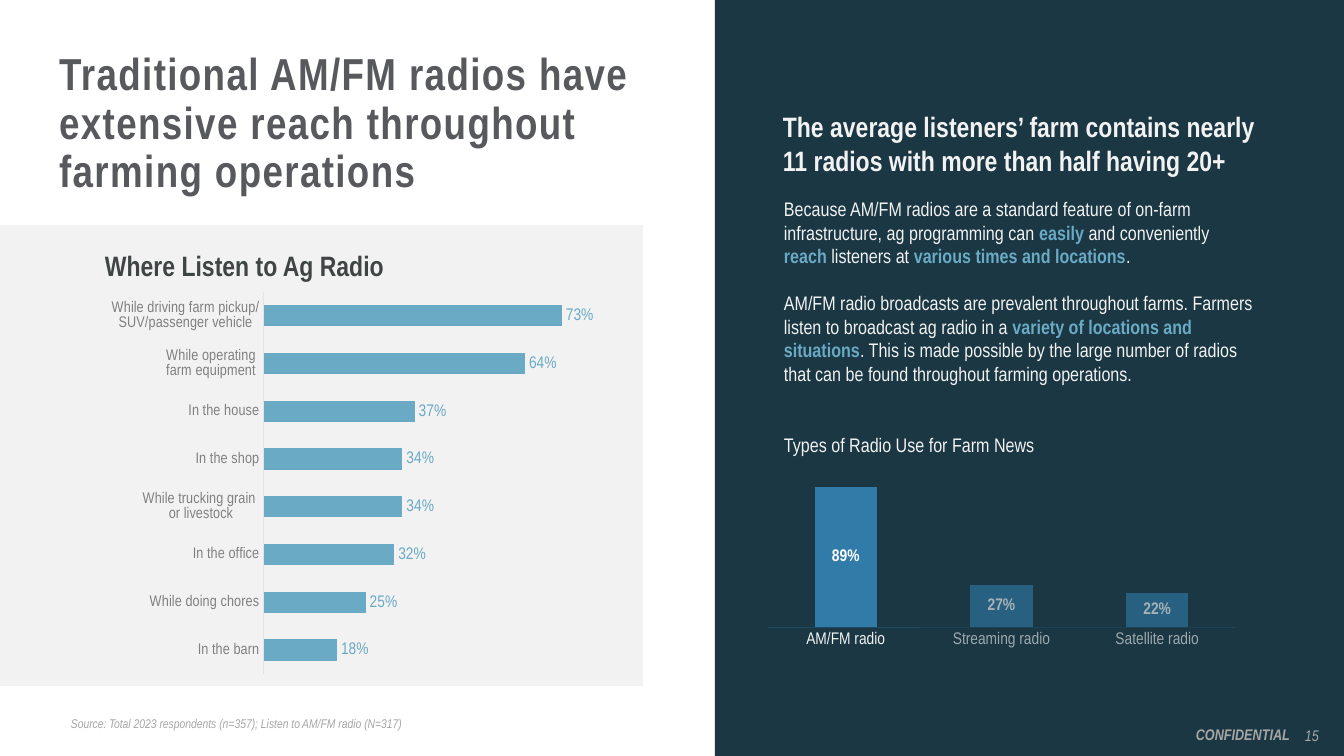
from lxml import etree
from pptx import Presentation, util as u
from pptx.chart.data import CategoryChartData
from pptx.dml.color import RGBColor
from pptx.enum import chart as ch, shapes, text
from pptx.oxml import parse_xml
from pptx.oxml.ns import nsdecls, qn

FONT = "Arial Narrow"
EMU_PER_PX = 914400 / 100.8
NAVY = RGBColor(0x1A, 0x37, 0x43)
AXIS_NAVY = RGBColor(0x1D, 0x4A, 0x65)
BLUE = RGBColor(0x31, 0x7B, 0xA9)
SKY = RGBColor(0x6A, 0xAA, 0xC4)
SILVER = RGBColor(0xBF, 0xBF, 0xBF)
AXIS_GREY = RGBColor(0xE1, 0xE4, 0xE4)
MUTED = RGBColor(0xA6, 0xA6, 0xA6)
GREY = RGBColor(0x80, 0x80, 0x80)
TITLE_GREY = RGBColor(0x57, 0x59, 0x5C)
CHARCOAL = RGBColor(0x3F, 0x44, 0x44)
PALE = RGBColor(0xF2, 0xF2, 0xF2)
WHITE = RGBColor(0xFF, 0xFF, 0xFF)

LISTENING_PLACES = {
    "While driving farm pickup/\nSUV/passenger vehicle": 0.73,
    "While operating \nfarm equipment ": 0.64,
    "In the house": 0.37,
    "In the shop": 0.34,
    "While trucking grain \nor livestock": 0.34,
    "In the office": 0.32,
    "While doing chores": 0.25,
    "In the barn": 0.18,
}
RADIO_TYPES = {"AM/FM radio": 0.89, "Streaming radio": 0.27, "Satellite radio": 0.22}

# Each paragraph: space before in points, then (wording, is highlighted) pieces.
STORY = [
    (0, [("Because AM/FM radios are a standard feature of on-farm infrastructure, "
          "ag programming can ", False),
         ("easily ", True), ("and conveniently ", False), ("reach ", True),
         ("listeners at ", False), ("various times and locations", True), (".", False)]),
    (17, [("AM/FM radio broadcasts are prevalent throughout farms. Farmers listen to "
           "broadcast ag radio in a ", False),
          ("variety of locations and situations", True),
          (". This is made possible by the large number of radios that can be found "
           "throughout farming operations.", False)]),
    (34, [("Types of Radio Use for Farm News", False)]),
]


def px(*lengths):
    return [u.Emu(round(length * EMU_PER_PX)) for length in lengths]


def style_font(font, size, color, bold=False, italic=False):
    font.name, font.size = FONT, u.Pt(size)
    font.bold, font.italic = bold, italic
    font.color.rgb = color


def add_panel(slide, box, color, opacity=100):
    panel = slide.shapes.add_shape(shapes.MSO_SHAPE.RECTANGLE, *px(*box))
    panel.shadow.inherit = False
    panel.fill.solid()
    panel.fill.fore_color.rgb = color
    panel.line.fill.background()
    if opacity < 100:
        tint = panel.fill._xPr.find(qn("a:solidFill"))[0]
        etree.SubElement(tint, qn("a:alpha")).set("val", str(opacity * 1000))


def add_label(slide, box, wording, size, color, bold=False, italic=False,
              align=text.PP_ALIGN.LEFT, anchor=text.MSO_ANCHOR.TOP):
    frame = slide.shapes.add_textbox(*px(*box)).text_frame
    frame.word_wrap = True
    frame.vertical_anchor = anchor
    line = frame.paragraphs[0]
    line.text = wording
    line.alignment = align
    style_font(line.font, size, color, bold, italic)


def set_title(slide, box, wording):
    title = slide.shapes.title
    title.left, title.top, title.width, title.height = px(*box)
    frame = title.text_frame
    frame.auto_size = text.MSO_AUTO_SIZE.NONE
    frame.vertical_anchor = text.MSO_ANCHOR.TOP
    line = frame.paragraphs[0]
    line.text = wording
    line.alignment = text.PP_ALIGN.LEFT
    line.line_spacing = 0.9
    style_font(line.font, 32, TITLE_GREY, bold=True)
    line.runs[0].font._element.set("spc", "100")


def add_story(slide, box):
    frame = slide.shapes.add_textbox(*px(*box)).text_frame
    frame.word_wrap = True
    for number, (gap, pieces) in enumerate(STORY):
        line = frame.add_paragraph() if number else frame.paragraphs[0]
        if gap:
            line.space_before = u.Pt(gap)
        style_font(line.font, 14, PALE)
        for wording, highlighted in pieces:
            run = line.add_run()
            run.text = wording
            if highlighted:
                run.font.bold = True
                run.font.color.rgb = SKY


def add_share_chart(slide, box, kind, shares, maximum, gap, bar_color, axis_color):
    """Add a one-series percentage chart with a hidden value axis."""
    data = CategoryChartData(number_format="0%")
    data.categories = shares.keys()
    data.add_series("Series 1", shares.values())
    chart = slide.shapes.add_chart(kind, *px(*box), data).chart
    chart.has_legend = chart.has_title = False
    style_font(chart.font, 12, CHARCOAL)

    values = chart.value_axis
    values.visible = values.has_major_gridlines = False
    values.minimum_scale, values.maximum_scale = 0, maximum
    categories = chart.category_axis
    categories.major_tick_mark = ch.XL_TICK_MARK.NONE
    categories.format.line.color.rgb = axis_color
    categories.format.line.width = u.Pt(0.75)

    plot = chart.plots[0]
    plot.gap_width = gap
    plot.vary_by_categories = False
    fill = plot.series[0].format.fill
    fill.solid()
    fill.fore_color.rgb = bar_color
    labels = plot.series[0].data_labels
    labels.show_value = True
    labels.number_format, labels.number_format_is_linked = "0%", False
    return chart, labels


def place_plot(chart, **shares):
    """Fix the inner plot area as shares of the chart's size."""
    sizes = "".join(f'<c:{name} val="{share}"/>' for name, share in shares.items())
    layout = parse_xml(
        f'<c:layout {nsdecls("c")}><c:manualLayout><c:layoutTarget val="inner"/>'
        f'<c:xMode val="edge"/><c:yMode val="edge"/>{sizes}</c:manualLayout></c:layout>')
    area = chart._chartSpace.chart.plotArea
    for old in area.findall(qn("c:layout")):
        area.remove(old)
    area.insert(0, layout)


def add_places_chart(slide):
    chart, labels = add_share_chart(
        slide, (100, 284, 584, 398), ch.XL_CHART_TYPE.BAR_CLUSTERED,
        LISTENING_PLACES, 1, 125, SKY, AXIS_GREY)
    chart.category_axis.reverse_order = True
    style_font(chart.category_axis.tick_labels.font, 11, GREY)
    labels.position = ch.XL_LABEL_POSITION.OUTSIDE_END
    style_font(labels.font, 12, SKY)


def add_types_chart(slide):
    chart, labels = add_share_chart(
        slide, (753, 404, 497, 263), ch.XL_CHART_TYPE.COLUMN_CLUSTERED,
        RADIO_TYPES, 1.2, 150, BLUE, AXIS_NAVY)
    place_plot(chart, x=0.03, y=0.13, w=0.94, h=0.72)
    style_font(chart.category_axis.tick_labels.font, 12, PALE)
    labels.position = ch.XL_LABEL_POSITION.CENTER
    style_font(labels.font, 12, WHITE, bold=True)


def main():
    deck = Presentation()
    deck.slide_width, deck.slide_height = px(1344, 756)
    slide = deck.slides.add_slide(deck.slide_layouts.get_by_name("Title Only"))

    add_panel(slide, (0, 225, 643, 461), SILVER, opacity=20)
    add_panel(slide, (715, 0, 629, 756), NAVY)
    add_label(slide, (1152, 720, 148, 29), "CONFIDENTIAL", 11, MUTED, bold=True,
              italic=True, align=text.PP_ALIGN.RIGHT)
    add_label(slide, (1292, 715, 40, 40), "15", 11, MUTED, italic=True,
              align=text.PP_ALIGN.CENTER, anchor=text.MSO_ANCHOR.MIDDLE)

    add_places_chart(slide)
    add_types_chart(slide)
    add_panel(slide, (920, 479, 328, 193), NAVY, opacity=39)

    add_story(slide, (774, 192, 492, 295))
    add_label(slide, (61, 711, 638, 25),
              "Source: Total 2023 respondents (n=357); Listen to AM/FM radio (N=317)",
              9, MUTED, italic=True, anchor=text.MSO_ANCHOR.MIDDLE)
    add_label(slide, (95, 244, 513, 44), "Where Listen to Ag Radio", 20, CHARCOAL, bold=True)
    set_title(slide, (49, 47, 605, 94),
              "Traditional AM/FM radios have extensive reach throughout farming operations")
    add_label(slide, (773, 105, 513, 78),
              "The average listeners’ farm contains nearly 11 radios with more than half "
              "having 20+", 20, PALE, bold=True)
    deck.save("out.pptx")


if __name__ == "__main__":
    main()
